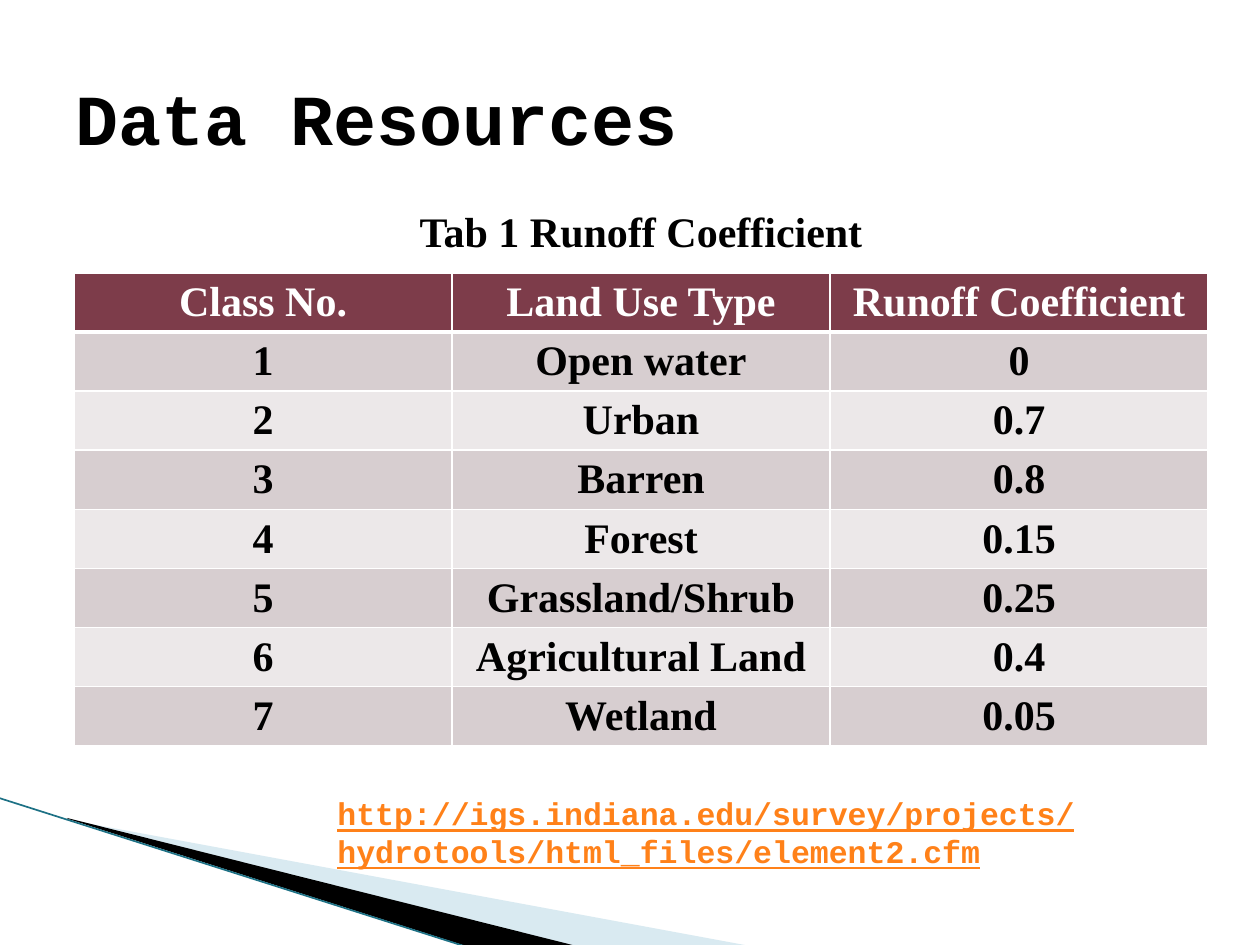
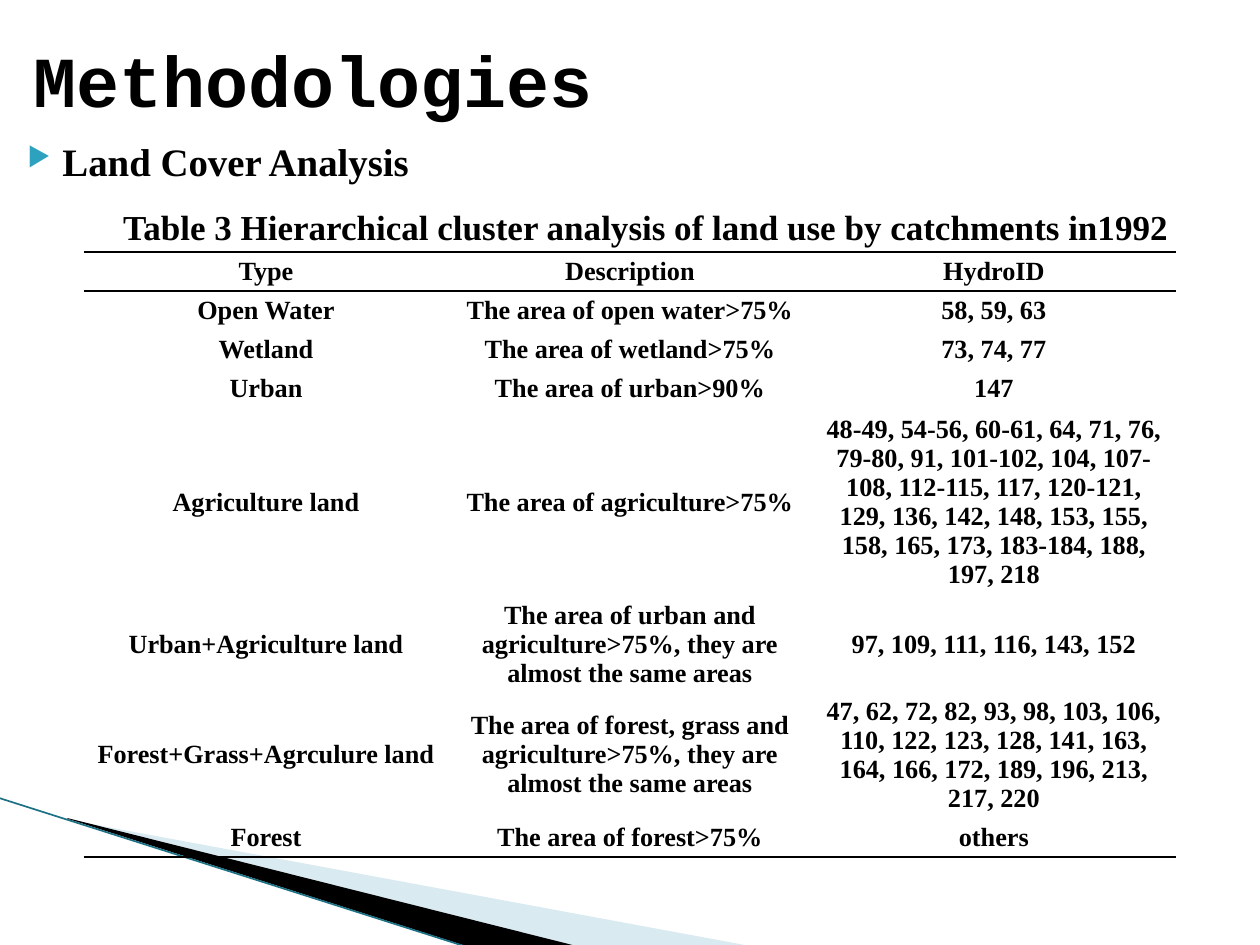
from lxml.etree import SubElement
from pptx import Presentation
from pptx.dml.color import RGBColor
from pptx.enum.text import MSO_ANCHOR as Anchor, PP_ALIGN as Align
from pptx.oxml.ns import qn
from pptx.util import Emu, Pt

PX = 914400 / 126
SERIF, MONO = "Times New Roman", "Courier New"
BLACK, WHITE, LINK, BULLET = "000000", "FFFFFF", "FF8119", "2DA2BF"
HEADER, BANDS = "7D3C4A", ("D7CED0", "ECE8E9")
PALE, EDGE = "A0CBDC", "1D7185"

WEDGES = [
    (PALE, 40, [(69, 820), (750, 946), (575, 946), (69, 819)]),
    (BLACK, 100, [(67, 818), (576, 946), (469, 947), (68, 819)]),
]
EDGE_LINE = (-1, 798, 467, 947)

RUNOFF = [
    ("Class No.", "Land Use Type", "Runoff Coefficient"),
    ("1", "Open water", "0"),
    ("2", "Urban", "0.7"),
    ("3", "Barren", "0.8"),
    ("4", "Forest", "0.15"),
    ("5", "Grassland/Shrub", "0.25"),
    ("6", "Agricultural Land", "0.4"),
    ("7", "Wetland", "0.05"),
]
CLUSTERS = [
    ("Type", "Description", "HydroID"),
    ("Open Water", "The area of open water>75%", "58, 59, 63"),
    ("Wetland", "The area of wetland>75%", "73, 74, 77"),
    ("Urban", "The area of urban>90%", "147"),
    ("Agriculture land", "The area of agriculture>75%",
     "48-49, 54-56, 60-61, 64, 71, 76, 79-80, 91, 101-102, 104, 107-108, "
     "112-115, 117, 120-121, 129, 136, 142, 148, 153, 155, 158, 165, 173, "
     "183-184, 188, 197, 218"),
    ("Urban+Agriculture land",
     "The area of urban and agriculture>75%, they are almost the same areas",
     "97, 109, 111, 116, 143, 152"),
    ("Forest+Grass+Agrculure land",
     "The area of forest, grass and agriculture>75%, they are almost the same areas",
     "47, 62, 72, 82, 93, 98, 103, 106, 110, 122, 123, 128, 141, 163, 164, "
     "166, 172, 189, 196, 213, 217, 220"),
    ("Forest", "The area of forest>75%", "others"),
]
RUNOFF_HEIGHTS = [59] * len(RUNOFF)
CLUSTER_HEIGHTS = [39, 39, 39, 39, 189, 95, 126, 39]


def px(value):
    return Emu(round(value * PX))


def rgb(color):
    return RGBColor.from_string(color)


def write(frame, text, size, font=SERIF, color=BLACK, align=Align.CENTER):
    frame.word_wrap = True
    para = frame.paragraphs[0]
    para.text = text
    para.alignment = align
    span = para.runs[0]
    span.font.name, span.font.size, span.font.bold = font, Pt(size), True
    span.font.color.rgb = rgb(color)
    return span


def add_text(page, area, text, size, anchor=Anchor.TOP, **style):
    box = page.shapes.add_textbox(*map(px, area))
    box.text_frame.vertical_anchor = anchor
    return box, write(box.text_frame, text, size, **style)


def add_title(page, left, top, text):
    add_text(page, (left, top, 1134, 158), text, 41, Anchor.MIDDLE,
             font=MONO, align=Align.LEFT)


def add_bullet(para):
    props = para._p.get_or_add_pPr()
    props.set("marL", str(px(50)))
    props.set("indent", str(-px(35)))
    color = SubElement(props, qn("a:buClr"))
    SubElement(color, qn("a:srgbClr"), val=BULLET)
    SubElement(props, qn("a:buSzPct"), val="68000")
    SubElement(props, qn("a:buChar"), char="▶")


def set_borders(cell, **sides):
    props = cell._tc.get_or_add_tcPr()
    for side in "LRTB":
        color, width = sides.get(side, (None, 0))
        line = SubElement(props, qn("a:ln" + side), w=str(Pt(width)))
        if color:
            fill = SubElement(line, qn("a:solidFill"))
            SubElement(fill, qn("a:srgbClr"), val=color)
        else:
            SubElement(line, qn("a:noFill"))


def add_grid(page, left, top, width, rows, heights, style_cell):
    columns = len(rows[0])
    area = map(px, (left, top, width, sum(heights)))
    table = page.shapes.add_table(len(rows), columns, *area).table
    table.first_row = table.horz_banding = False
    for column in table.columns:
        column.width = px(width / columns)
    for index, (row, height) in enumerate(zip(rows, heights)):
        table.rows[index].height = px(height)
        for cell, text in zip(table.rows[index].cells, row):
            style_cell(cell, text, index)


def style_runoff(cell, text, index):
    thin, thick = (WHITE, 1), (WHITE, 3)
    set_borders(cell, L=thin, R=thin, T=thick if index == 1 else thin,
                B=thick if index == 0 else thin)
    cell.fill.solid()
    cell.fill.fore_color.rgb = rgb(BANDS[(index - 1) % 2] if index else HEADER)
    write(cell.text_frame, text, 24, color=BLACK if index else WHITE)


def style_cluster(cell, text, index):
    rule = (BLACK, 1)
    sides = {}
    if index <= 1:
        sides["T"] = rule
    if index in (0, len(CLUSTERS) - 1):
        sides["B"] = rule
    set_borders(cell, **sides)
    cell.fill.background()
    cell.vertical_anchor = Anchor.MIDDLE
    cell.margin_left = cell.margin_right = px(9)
    cell.margin_top = cell.margin_bottom = 0
    write(cell.text_frame, text, 15)


def add_page(deck):
    page = deck.slides.add_slide(deck.slide_layouts[6])
    for color, opacity, (start, *corners) in WEDGES:
        builder = page.shapes.build_freeform(*start, scale=PX)
        builder.add_line_segments(corners)
        wedge = builder.convert_to_shape()
        wedge.shadow.inherit = False
        wedge.fill.solid()
        wedge.fill.fore_color.rgb = rgb(color)
        wedge.line.fill.background()
        if opacity < 100:
            tint = wedge._element.spPr.find(".//" + qn("a:srgbClr"))
            SubElement(tint, qn("a:alpha"), val=str(opacity * 1000))
    edge = page.shapes.add_connector(1, *map(px, EDGE_LINE))
    edge.line.color.rgb = rgb(EDGE)
    edge.line.width = Pt(0.95)
    SubElement(edge._element.spPr, qn("a:effectLst"))
    return page


def build_resources(deck):
    page = add_page(deck)
    add_grid(page, 74, 273, 1134, RUNOFF, RUNOFF_HEIGHTS, style_runoff)
    add_title(page, 63, 38, "Data Resources")
    add_text(page, (368, 199, 546, 63), "Tab 1 Runoff Coefficient", 24)
    address = "http://igs.indiana.edu/survey/projects/hydrotools/html_files/element2.cfm"
    _, span = add_text(page, (325, 788, 872, 89), address, 18,
                       font=MONO, color=LINK, align=Align.LEFT)
    span.font.underline = True


def build_methodologies(deck):
    page = add_page(deck)
    add_title(page, 21, 0, "Methodologies")
    caption = "Table 3 Hierarchical cluster analysis of land use by catchments in1992"
    add_text(page, (37, 199, 1218, 93), caption, 20)
    add_grid(page, 84, 252, 1092, CLUSTERS, CLUSTER_HEIGHTS, style_cluster)
    box, _ = add_text(page, (0, 131, 777, 53), "Land Cover Analysis", 22.2,
                      align=Align.LEFT)
    add_bullet(box.text_frame.paragraphs[0])


def main():
    deck = Presentation()
    deck.slide_width, deck.slide_height = px(1260), px(945)
    build_resources(deck)
    build_methodologies(deck)
    deck.save("out.pptx")


if __name__ == "__main__":
    main()
